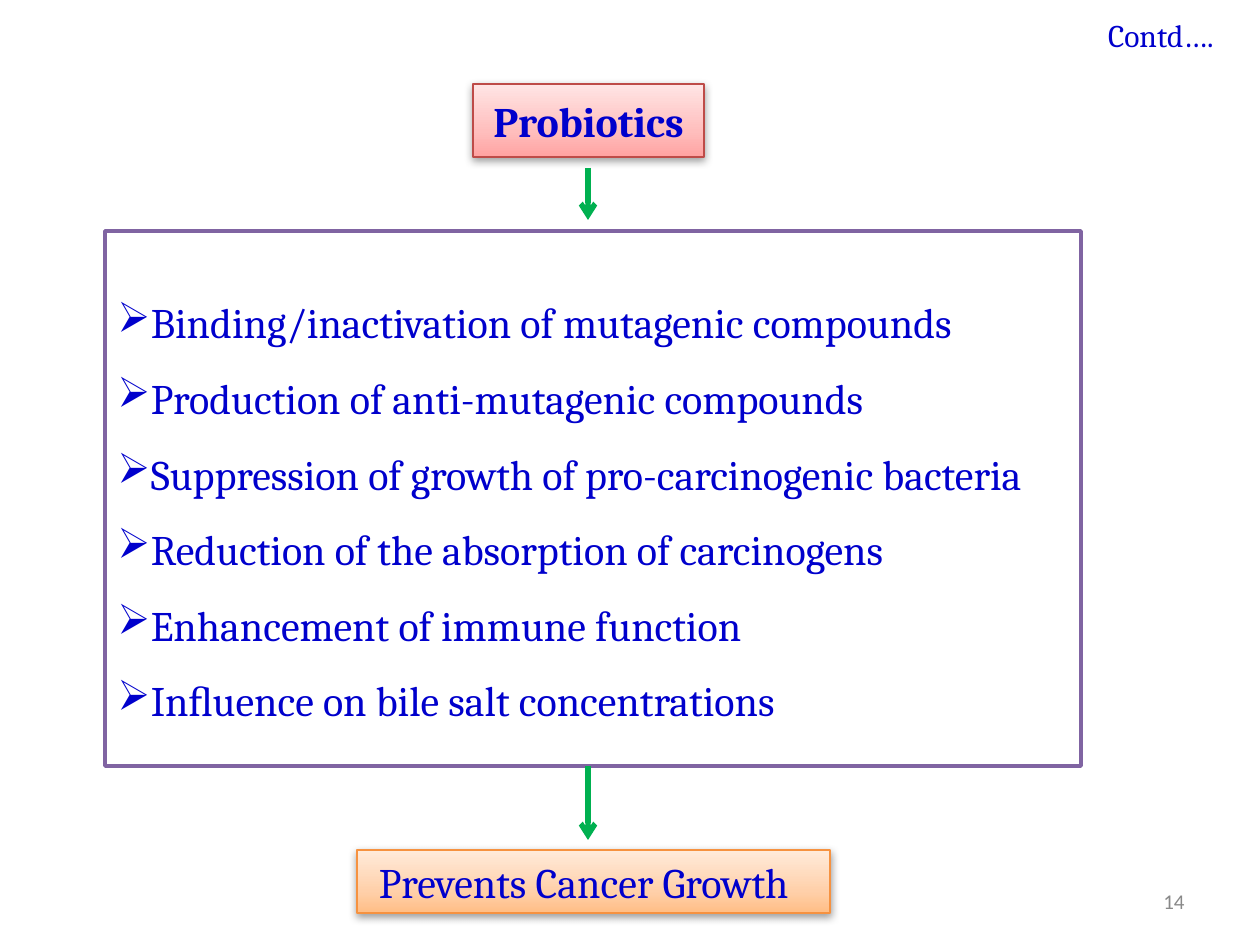
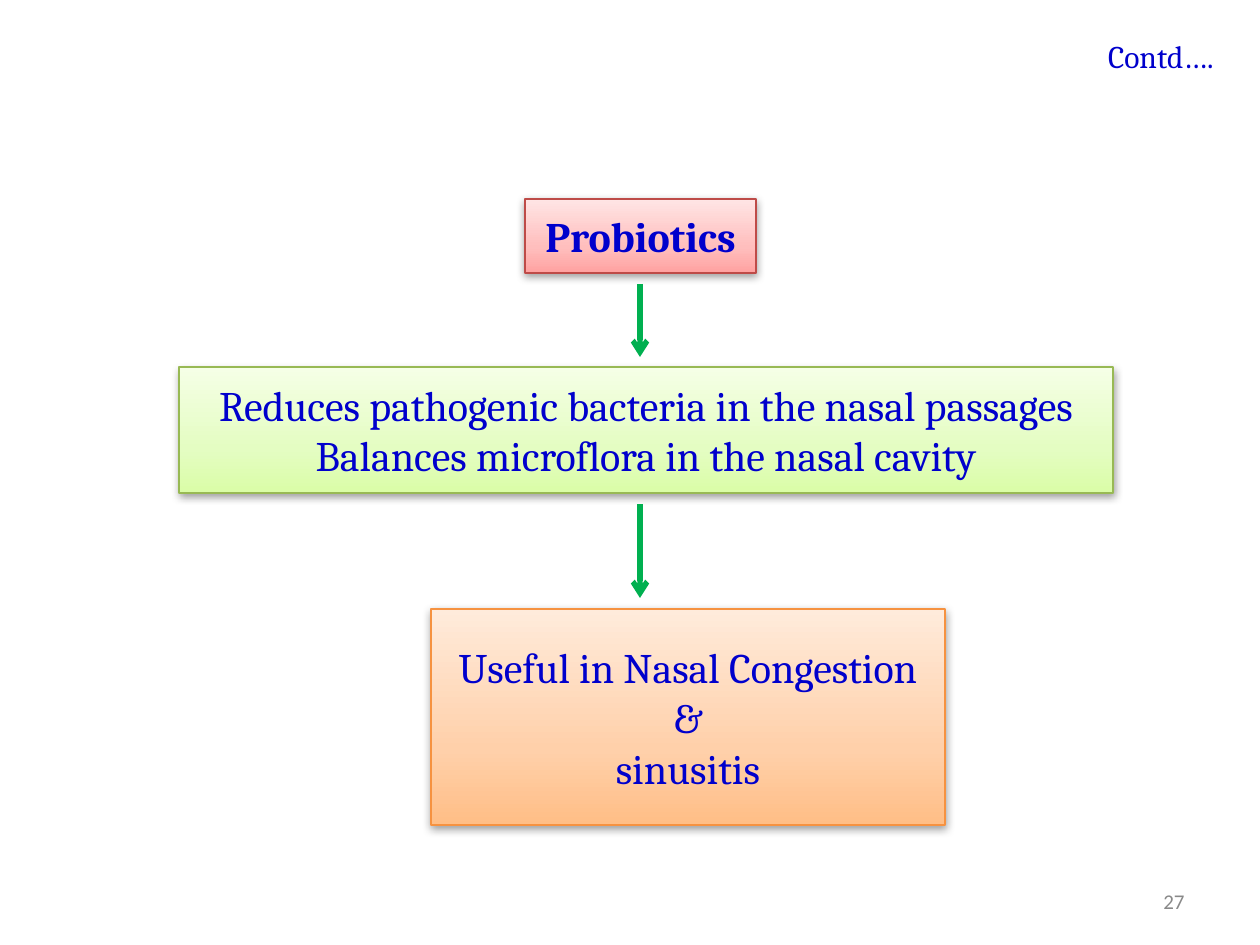
from pptx import Presentation
from pptx.dml.color import RGBColor
from pptx.enum.shapes import MSO_CONNECTOR, MSO_SHAPE
from pptx.enum.text import MSO_ANCHOR, PP_ALIGN
from pptx.oxml import parse_xml
from pptx.oxml.ns import nsdecls
from pptx.util import Pt

LINE, RECT = MSO_CONNECTOR.STRAIGHT, MSO_SHAPE.RECTANGLE
MID, TOP = MSO_ANCHOR.MIDDLE, MSO_ANCHOR.TOP
MIDDLE, RIGHT, JUST = PP_ALIGN.CENTER, PP_ALIGN.RIGHT, PP_ALIGN.JUSTIFY

# Content: boxes as (style, place, lines); arrows as (x, from y, to y)
SLIDES = [
    {
        "page": "14", "contd": 10,
        "boxes": [
            ("list", (105, 231, 976, 535), [
                "Binding/inactivation of mutagenic compounds",
                "Production of anti-mutagenic compounds",
                "Suppression of growth of pro-carcinogenic bacteria",
                "Reduction of the absorption of carcinogens",
                "Enhancement of immune function",
                "Inﬂuence on bile salt concentrations",
            ]),
            ("head", (473, 84, 231, 73), ["Probiotics"]),
            ("claim", (357, 850, 473, 63), ["Prevents Cancer Growth"]),
        ],
        "arrows": [(588, 168, 220), (588, 766, 840)],
    },
    {
        "page": "27", "contd": 31,
        "boxes": [
            ("head", (525, 199, 231, 74), ["Probiotics"]),
            ("effect", (179, 367, 934, 126), [
                "Reduces pathogenic bacteria in the nasal passages",
                "Balances microflora in the nasal cavity",
            ]),
            ("result", (431, 609, 514, 216), [
                "Useful in Nasal Congestion", "&", "sinusitis",
            ]),
        ],
        "arrows": [(640, 284, 357), (640, 504, 598)],
    },
]

# Shared look
COLORS = {"text": "0000CC", "page": "898989", "arrow": "00B050", "white": "FFFFFF",
          "purple": "8064A2", "red": "BE4B48", "green": "98B954", "orange": "F69240"}
FADES = {"red": ("FFA2A1", "FFBEBD", "FFE5E5"),
         "green": ("DAFDA7", "E4FDC2", "F5FFE6"),
         "orange": ("FFBE86", "FFD0AA", "FFEBDB")}
STOPS = (0, 35, 100)
BODY = {"name": "Cambria", "size": Pt(24), "bold": False}
NOTE = {"name": "Cambria", "size": Pt(18)}
PAGE = {"name": "Calibri", "size": Pt(12)}
STYLES = {
    "list": {"tint": "purple", "width": 2, "align": JUST, "bullet": True},
    "head": {"tint": "red", "font": {**BODY, "bold": True}},
    "effect": {"tint": "green"},
    "result": {"tint": "orange"},
    "claim": {"tint": "orange", "align": JUST, "inset": 22},
}
HANG = 33


def px(n):
    return round(n * 914400 / 126)


def rgb(name):
    return RGBColor.from_string(COLORS[name])


def write(shape, lines, font, color="text", align=MIDDLE, anchor=MID, bullet=False):
    frame = shape.text_frame
    frame.word_wrap = True
    frame.vertical_anchor = anchor
    for i, line in enumerate(lines):
        para = frame.paragraphs[0] if i == 0 else frame.add_paragraph()
        para.alignment = align
        if bullet:
            para.line_spacing = 1.5
            props = para._p.get_or_add_pPr()
            props.set("marL", str(px(HANG)))
            props.set("indent", str(-px(HANG)))
            props.append(parse_xml(f'<a:buChar {nsdecls("a")} char="➢"/>'))
        run = para.add_run()
        run.text = line
        for key, value in font.items():
            setattr(run.font, key, value)
        run.font.color.rgb = rgb(color)


def fade(shape, tint):
    """Three-stop gradient, palest at the top, with a soft shadow below."""
    stops = "".join(f'<a:gs pos="{pos * 1000}"><a:srgbClr val="{hue}"/></a:gs>'
                    for pos, hue in zip(STOPS, FADES[tint]))
    props = shape._element.spPr
    props.find("{*}prstGeom").addnext(parse_xml(
        f'<a:gradFill {nsdecls("a")} rotWithShape="1"><a:gsLst>{stops}</a:gsLst>'
        '<a:lin ang="16200000" scaled="0"/></a:gradFill>'))
    props.find("{*}effectLst").append(parse_xml(
        f'<a:outerShdw {nsdecls("a")} blurRad="{Pt(5)}" dist="{Pt(1.6)}" dir="5400000" '
        'rotWithShape="0"><a:srgbClr val="000000"><a:alpha val="38000"/></a:srgbClr>'
        '</a:outerShdw>'))


def add_box(slide, kind, place, lines):
    style = STYLES[kind]
    tint = style["tint"]
    shape = slide.shapes.add_shape(RECT, *map(px, place))
    shape.shadow.inherit = False
    shape.line.color.rgb = rgb(tint)
    shape.line.width = Pt(style.get("width", 0.75))
    if tint in FADES:
        fade(shape, tint)
    else:
        shape.fill.solid()
        shape.fill.fore_color.rgb = rgb("white")
    if "inset" in style:
        shape.text_frame.margin_left = px(style["inset"])
    write(shape, lines, style.get("font", BODY), align=style.get("align", MIDDLE),
          bullet=style.get("bullet", False))


def add_arrow(slide, x, start, end):
    arrow = slide.shapes.add_connector(LINE, px(x), px(start), px(x), px(end))
    arrow.line.color.rgb = rgb("arrow")
    arrow.line.width = Pt(3)
    arrow.line._get_or_add_ln().append(
        parse_xml(f'<a:tailEnd {nsdecls("a")} type="arrow"/>'))
    arrow._element.spPr.append(parse_xml(f'<a:effectLst {nsdecls("a")}/>'))


def add_note(slide, place, text, font, **look):
    box = slide.shapes.add_textbox(*map(px, place))
    write(box, [text], font, align=RIGHT, **look)


def main():
    deck = Presentation()
    deck.slide_width, deck.slide_height = px(1260), px(945)
    for data in SLIDES:
        slide = deck.slides.add_slide(deck.slide_layouts[6])
        for box in data["boxes"]:
            add_box(slide, *box)
        for arrow in data["arrows"]:
            add_arrow(slide, *arrow)
        # Corner note and page number
        add_note(slide, (1040, data["contd"], 186, 51), "Contd….", NOTE, anchor=TOP)
        add_note(slide, (903, 876, 294, 50), data["page"], PAGE, color="page")
    deck.save("out.pptx")


if __name__ == "__main__":
    main()
